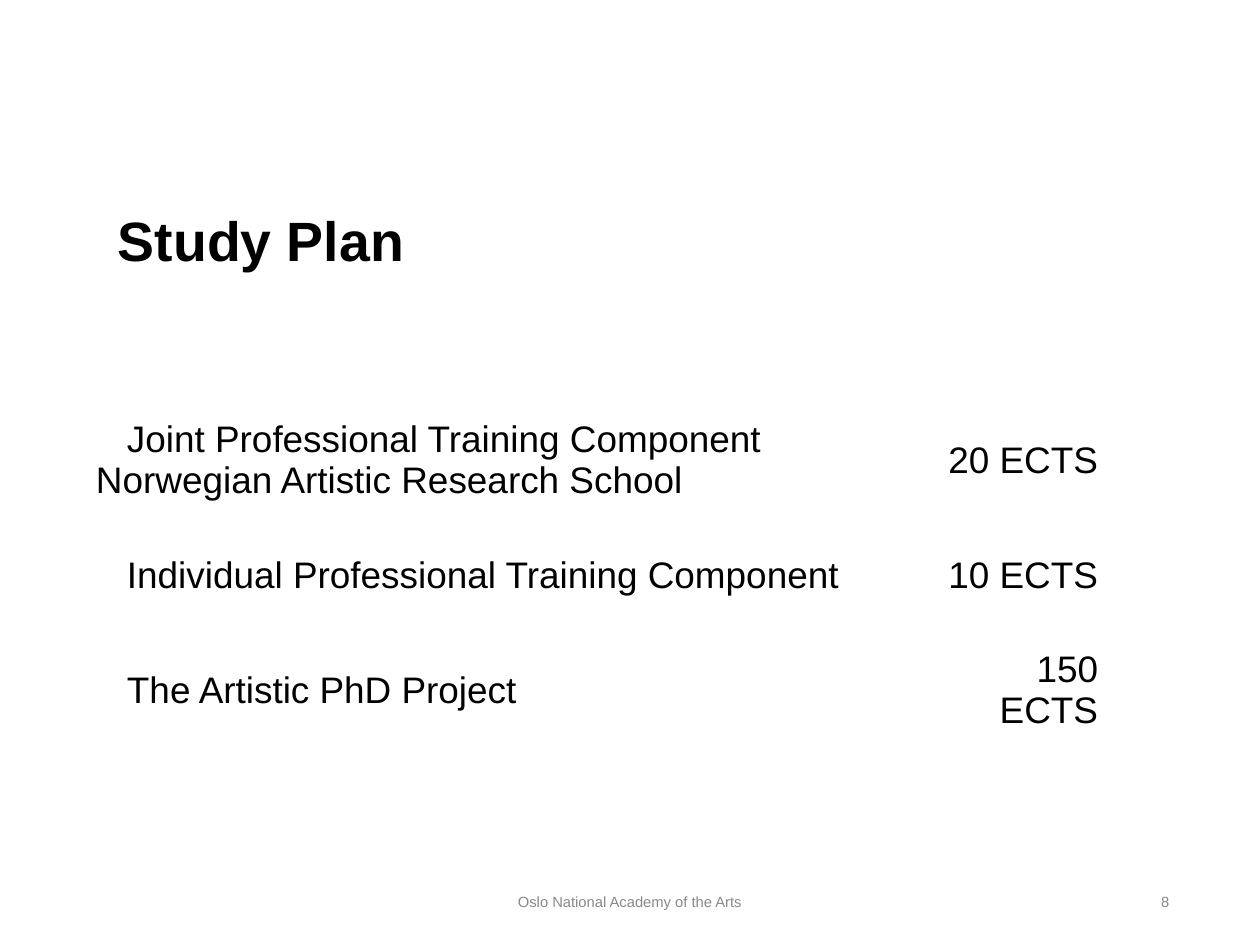
from pptx import Presentation
from pptx.dml.color import RGBColor
from pptx.enum.text import MSO_ANCHOR, MSO_AUTO_SIZE, PP_ALIGN
from pptx.util import Cm, Pt

MID = MSO_ANCHOR.MIDDLE
LEFT, CENTER, RIGHT = PP_ALIGN.LEFT, PP_ALIGN.CENTER, PP_ALIGN.RIGHT
FIXED = MSO_AUTO_SIZE.NONE

TITLE = "Study Plan"
PLAN = [
    ("Joint Professional Training Component\vNorwegian Artistic Research School", "20 ECTS"),
    ("Individual Professional Training Component", "10 ECTS"),
    ("The Artistic PhD Project", "150 ECTS"),
]
NOTES = [
    ("Oslo National Academy of the Arts", (12.09, 25.12, 11.94, 1.45), CENTER, True),
    ("8", (33.12, 25.48, 0.53, 0.74), RIGHT, False),
]
WIDTHS = (23.88, 7.26)
HEIGHTS = (3.63, 2.95, 2.95)
PAD, END, INDENT = 0.64, 1.77, 0.89
BLACK, GRAY = "000000", "888888"


def style(par, size, color, align, bold=False):
    par.alignment = align
    for run in par.runs:
        font = run.font
        font.name, font.size, font.bold = "Arial", Pt(size), bold
        font.color.rgb = RGBColor.from_string(color)


def fill(shape, text, box, size, color, align, wrap=True, bold=False):
    shape.left, shape.top, shape.width, shape.height = map(Cm, box)
    frame = shape.text_frame
    frame.text = text
    frame.word_wrap = wrap
    frame.auto_size = FIXED
    frame.vertical_anchor = MID
    frame.margin_left = frame.margin_right = Cm(0.13)
    frame.margin_top = frame.margin_bottom = Cm(0.13)
    style(frame.paragraphs[0], size, color, align, bold)


def add_plan(slide):
    table = slide.shapes.add_table(
        len(PLAN), len(WIDTHS), Cm(2.11), Cm(11.38),
        Cm(sum(WIDTHS)), Cm(sum(HEIGHTS))).table
    table.first_row = table.horz_banding = False
    for col, width in zip(table.columns, WIDTHS):
        col.width = Cm(width)
    for row, height, texts in zip(table.rows, HEIGHTS, PLAN):
        row.height = Cm(height)
        for cell, text, align in zip(row.cells, texts, (LEFT, RIGHT)):
            cell.text = text
            cell.fill.background()
            cell.vertical_anchor = MID
            cell.margin_left = cell.margin_top = cell.margin_bottom = Cm(PAD)
            cell.margin_right = Cm(END if align == RIGHT else PAD)
            par = cell.text_frame.paragraphs[0]
            style(par, 30, BLACK, align)
            if align == LEFT:
                par._p.get_or_add_pPr().set("indent", str(Cm(INDENT)))


def main():
    deck = Presentation()
    deck.slide_width, deck.slide_height = Cm(36.12), Cm(27.1)
    slide = deck.slides.add_slide(deck.slide_layouts[5])
    fill(slide.shapes.title, TITLE, (3.25, 4.24, 31.17, 5.23), 45, BLACK, LEFT, bold=True)
    add_plan(slide)
    for text, box, align, wrap in NOTES:
        note = slide.shapes.add_textbox(0, 0, 0, 0)
        fill(note, text, box, 12, GRAY, align, wrap)
    deck.save("out.pptx")


if __name__ == "__main__":
    main()
